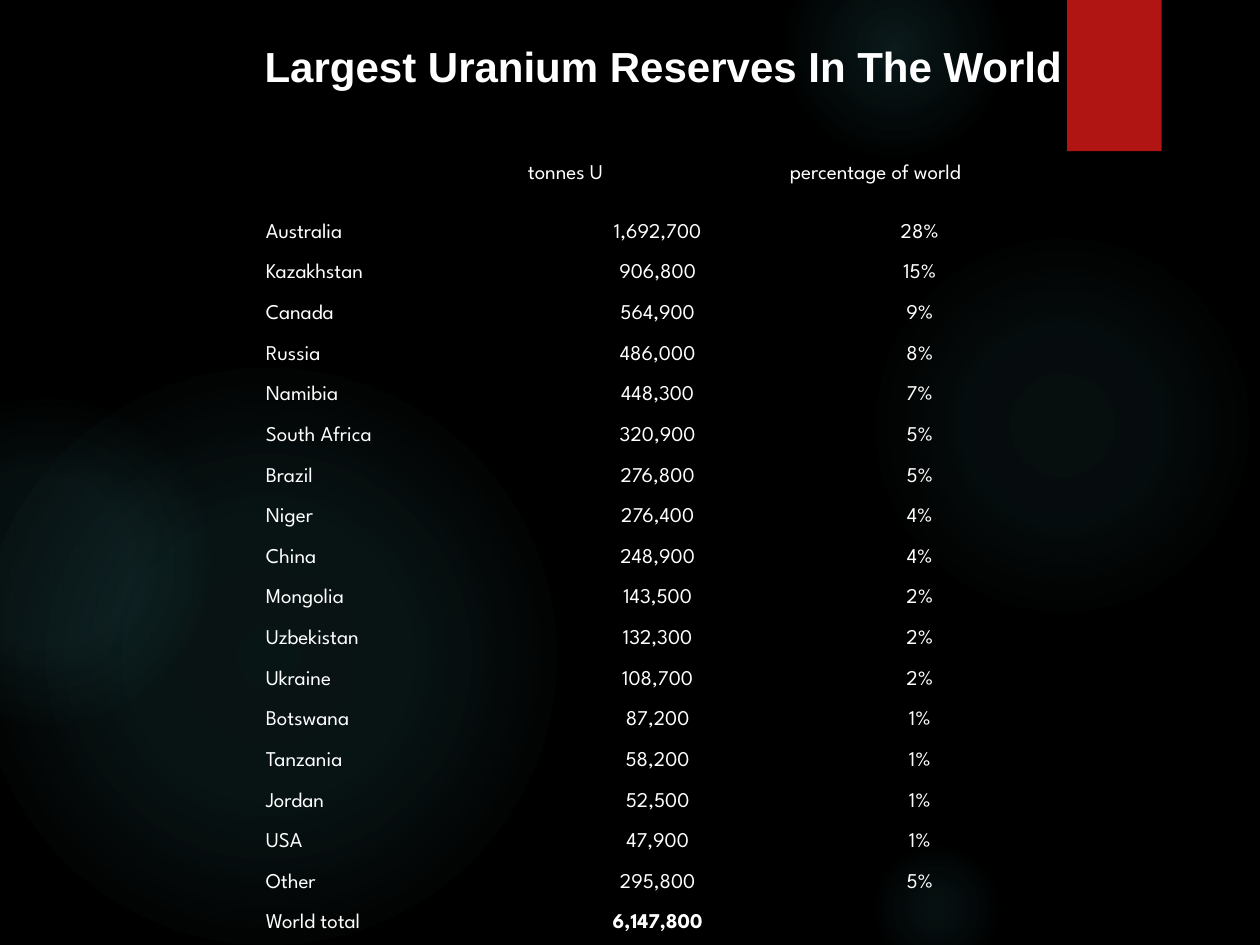
"""Build a dark slide with a table of the largest uranium reserves."""
from lxml import etree
from pptx import Presentation
from pptx import util as u
from pptx.dml.color import RGBColor
from pptx.enum import shapes, text
from pptx.oxml import parse_xml

NS = "http://schemas.openxmlformats.org/drawingml/2006/main"
NO_GRID = "{2D5ABB26-0587-4C30-8999-92F81FD0307C}"
WHITE, BLACK, RED, TEAL = "FFFFFF", "000000", "B01513", "50B9C1"

TITLE = "Largest Uranium Reserves In The World"
HEADER = ("", "tonnes U", "percentage of world")
RESERVES = [
    ("Australia", "1,692,700", "28%"),
    ("Kazakhstan", "906,800", "15%"),
    ("Canada", "564,900", "9%"),
    ("Russia", "486,000", "8%"),
    ("Namibia", "448,300", "7%"),
    ("South Africa", "320,900", "5%"),
    ("Brazil", "276,800", "5%"),
    ("Niger", "276,400", "4%"),
    ("China", "248,900", "4%"),
    ("Mongolia", "143,500", "2%"),
    ("Uzbekistan", "132,300", "2%"),
    ("Ukraine", "108,700", "2%"),
    ("Botswana", "87,200", "1%"),
    ("Tanzania", "58,200", "1%"),
    ("Jordan", "52,500", "1%"),
    ("USA", "47,900", "1%"),
    ("Other", "295,800", "5%"),
    ("World total", "6,147,800", ""),
]
# left, top, diameter, ((gradient stop, opacity), ...)
GLOWS = [
    (496, 132, 222, ((0, 7), (36, 6), (69, 0))),
    (448, -36, 126, ((0, 14), (36, 7), (73, 0))),
    (496, 480, 78, ((0, 9), (36, 5), (66, 0))),
    (-12, 210, 330, ((0, 11), (36, 10), (75, 0))),
    (-66, 228, 186, ((0, 8), (36, 8), (72, 0))),
]
COLUMN_WIDTH, HEADER_HEIGHT, ROW_HEIGHT = 149.76, 43.92, 23.23


def color(value):
    return RGBColor.from_string(value)


def write(frame, words, size=12, font="League Spartan", bold=False, align=text.PP_ALIGN.LEFT):
    paragraph = frame.paragraphs[0]
    paragraph.alignment = align
    run = paragraph.add_run()
    run.text = words
    run.font.size, run.font.name, run.font.bold = u.Pt(size), font, bold
    run.font.color.rgb = color(WHITE)


def add_block(slide, kind, left, top, width, height, fill):
    block = slide.shapes.add_shape(kind, u.Pt(left), u.Pt(top), u.Pt(width), u.Pt(height))
    block.shadow.inherit = False
    block.line.fill.background()
    block.fill.solid()
    block.fill.fore_color.rgb = color(fill)
    return block


def add_glow(slide, left, top, diameter, stops):
    glow = add_block(slide, shapes.MSO_SHAPE.OVAL, left, top, diameter, diameter, TEAL)
    stop_xml = "".join(
        f'<a:gs pos="{place * 1000}"><a:srgbClr val="{TEAL}">'
        f'<a:alpha val="{opacity * 1000}"/></a:srgbClr></a:gs>'
        for place, opacity in stops)
    gradient = parse_xml(
        f'<a:gradFill xmlns:a="{NS}"><a:gsLst>{stop_xml}</a:gsLst><a:path path="circle">'
        '<a:fillToRect l="50000" t="50000" r="50000" b="50000"/></a:path></a:gradFill>')
    properties = glow._element.spPr
    properties.replace(properties.find(f"{{{NS}}}solidFill"), gradient)


def add_ribbon(slide):
    ribbon = add_block(slide, shapes.MSO_SHAPE.RECTANGLE, 609.84, 0, 54, 86.4, RED)
    effects = ribbon._element.spPr.find(f"{{{NS}}}effectLst")
    shadow = etree.SubElement(effects, f"{{{NS}}}outerShdw", blurRad=str(u.Pt(3)),
                              dist=str(u.Pt(2)), dir="5400000", rotWithShape="0")
    tint = etree.SubElement(shadow, f"{{{NS}}}srgbClr", val=BLACK)
    etree.SubElement(tint, f"{{{NS}}}alpha", val="45000")


def place_title(slide):
    title = slide.shapes.title
    title.left, title.top, title.width, title.height = map(u.Pt, (144, 18, 555.84, 110.16))
    frame = title.text_frame
    frame.word_wrap = True
    frame.auto_size = text.MSO_AUTO_SIZE.NONE
    frame.vertical_anchor = text.MSO_ANCHOR.TOP
    frame.margin_top = u.Pt(5)
    write(frame, TITLE, size=24, font="Arial", bold=True)
    slide.shapes._spTree.append(title._element)


def add_reserves(slide):
    rows = [HEADER] + RESERVES
    heights = [HEADER_HEIGHT] + [ROW_HEIGHT] * len(RESERVES)
    table = slide.shapes.add_table(
        len(rows), len(HEADER), u.Pt(151.2), u.Pt(77.76),
        u.Pt(COLUMN_WIDTH * len(HEADER)), u.Pt(sum(heights))).table
    table.first_row = table.horz_banding = False
    table._tbl.tblPr[0].text = NO_GRID
    for column in table.columns:
        column.width = u.Pt(COLUMN_WIDTH)
    for r, (entries, height) in enumerate(zip(rows, heights)):
        table.rows[r].height = u.Pt(height)
        for c, entry in enumerate(entries):
            cell = table.cell(r, c)
            cell.fill.background()
            cell.vertical_anchor = text.MSO_ANCHOR.MIDDLE
            cell.margin_left = cell.margin_right = u.Pt(0.72)
            cell.margin_top = cell.margin_bottom = u.Pt(0.72)
            is_figure = r > 0 and c > 0
            write(cell.text_frame, entry,
                  bold=is_figure and r == len(RESERVES),
                  align=text.PP_ALIGN.CENTER if is_figure else text.PP_ALIGN.LEFT)


def main():
    deck = Presentation()
    deck.slide_width, deck.slide_height = u.Pt(720), u.Pt(540)
    slide = deck.slides.add_slide(deck.slide_layouts[5])
    slide.background.fill.solid()
    slide.background.fill.fore_color.rgb = color(BLACK)
    for glow in GLOWS:
        add_glow(slide, *glow)
    add_ribbon(slide)
    place_title(slide)
    add_reserves(slide)
    deck.save("out.pptx")


if __name__ == "__main__":
    main()
